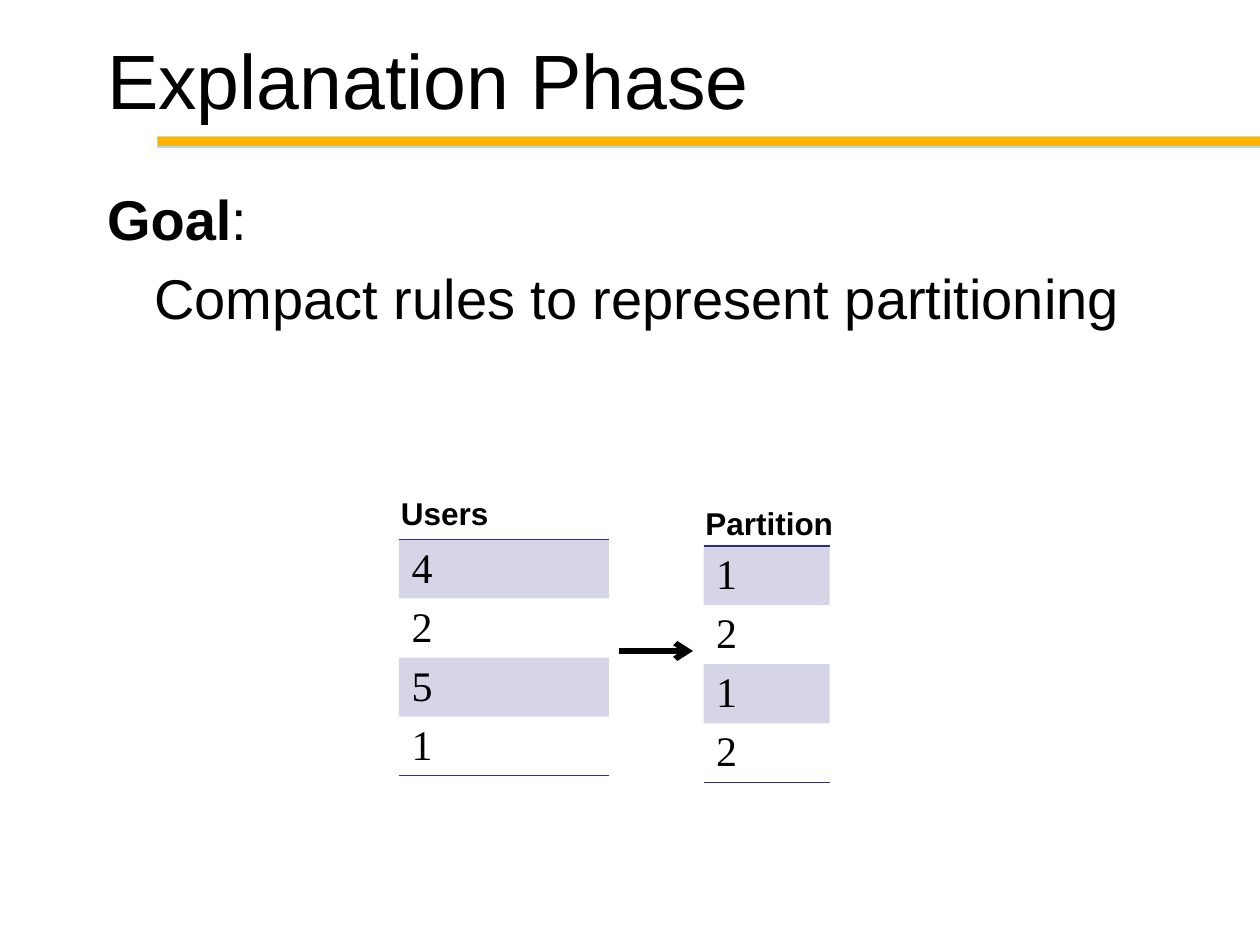
from lxml import etree
from pptx import Presentation
from pptx.dml.color import RGBColor
from pptx.enum.shapes import MSO_CONNECTOR, MSO_SHAPE
from pptx.enum.text import MSO_ANCHOR, MSO_AUTO_SIZE, PP_ALIGN
from pptx.oxml import parse_xml
from pptx.oxml.ns import nsdecls, qn
from pptx.util import Pt

STRAIGHT = MSO_CONNECTOR.STRAIGHT
RECT = MSO_SHAPE.RECTANGLE
MIDDLE, TOP = MSO_ANCHOR.MIDDLE, MSO_ANCHOR.TOP
NO_FIT, GROW = MSO_AUTO_SIZE.NONE, MSO_AUTO_SIZE.SHAPE_TO_FIT_TEXT
LEFT = PP_ALIGN.LEFT

COLORS = {"text": "000000", "bar": "FFB300", "bar_edge": "B6DCDF", "table": "2D2D8A"}
PLAIN_TABLE = "{2D5ABB26-0587-4C30-8999-92F81FD0307C}"
ROW_HEIGHT = 33.7


def rgb(name):
    return RGBColor.from_string(COLORS[name])


def place(sp, left, top, width, height):
    sp.left, sp.top, sp.width, sp.height = Pt(left), Pt(top), Pt(width), Pt(height)


def add_run(p, text, size, font="Arial", bold=False):
    r = p.add_run()
    r.text = text
    r.font.size, r.font.name, r.font.bold = Pt(size), font, bold
    r.font.color.rgb = rgb("text")


def set_title(s, text):
    sp = s.shapes.title
    place(sp, 54, 0, 612, 90)
    tf = sp.text_frame
    tf.vertical_anchor, tf.auto_size = MIDDLE, NO_FIT
    p = tf.paragraphs[0]
    p.alignment = LEFT
    add_run(p, text, 44)


def set_body(s, lines):
    """Each line is a left margin and its (text, bold) runs."""
    sp = s.placeholders[1]
    place(sp, 54, 102, 612, 378)
    tf = sp.text_frame
    tf.vertical_anchor, tf.auto_size = TOP, NO_FIT
    for i, (margin, runs) in enumerate(lines):
        p = tf.add_paragraph() if i else tf.paragraphs[0]
        pPr = p._p.get_or_add_pPr()
        pPr.set("marL", str(Pt(margin)))
        pPr.set("indent", "0")
        etree.SubElement(pPr, qn("a:buNone"))
        for text, bold in runs:
            add_run(p, text, 32, bold=bold)


def add_bar(s):
    sp = s.shapes.add_shape(RECT, Pt(90), Pt(78), Pt(633), Pt(6))
    sp.shadow.inherit = False
    sp.fill.solid()
    sp.fill.fore_color.rgb = rgb("bar")
    sp.line.color.rgb = rgb("bar_edge")
    sp.line.width = Pt(0.75)
    s.shapes.title._element.addprevious(sp._element)  # behind the text


def add_border(cell, side):
    cell._tc.get_or_add_tcPr().insert(0, parse_xml(
        f'<a:{side} {nsdecls("a")} w="{Pt(1)}"><a:solidFill>'
        f'<a:srgbClr val="{COLORS["table"]}"/></a:solidFill></a:{side}>'))


def add_column_table(s, values, left, top, width):
    frame = s.shapes.add_table(len(values), 1, Pt(left), Pt(top), Pt(width),
                               Pt(ROW_HEIGHT * len(values)))
    table = frame.table
    table.first_row = table.horz_banding = False
    table._tbl.tblPr.find(qn("a:tableStyleId")).text = PLAIN_TABLE
    for i, value in enumerate(values):
        cell = table.cell(i, 0)
        add_run(cell.text_frame.paragraphs[0], value, 24, "Times New Roman")
        if i % 2:
            cell.fill.background()
            continue
        cell.fill.solid()
        cell.fill.fore_color.rgb = rgb("table")
        color = cell._tc.tcPr.find(".//" + qn("a:srgbClr"))
        etree.SubElement(color, qn("a:alpha"), val="20000")
    add_border(table.cell(0, 0), "lnT")
    add_border(table.cell(len(values) - 1, 0), "lnB")


def add_arrow(s, x1, x2, y):
    line = s.shapes.add_connector(STRAIGHT, Pt(x1), Pt(y), Pt(x2), Pt(y))
    line.line.color.rgb = rgb("text")
    line.line.width = Pt(3.25)
    etree.SubElement(line.line._get_or_add_ln(), qn("a:tailEnd"), type="arrow")
    etree.SubElement(line._element.spPr, qn("a:effectLst"))


def add_label(s, text, left, top):
    tf = s.shapes.add_textbox(Pt(left), Pt(top), Pt(144), Pt(29)).text_frame
    tf.word_wrap, tf.auto_size = True, GROW
    add_run(tf.paragraphs[0], text, 18, bold=True)


def main():
    prs = Presentation()
    prs.slide_width, prs.slide_height = Pt(720), Pt(540)
    s = prs.slides.add_slide(prs.slide_layouts[1])

    # Heading and goal
    add_bar(s)
    set_title(s, "Explanation Phase")
    set_body(s, [(0, [("Goal", True), (":", False)]),
                 (27, [("Compact rules to represent partitioning", False)])])

    # Users mapped to partitions
    add_column_table(s, "4251", 228, 308.2, 120)
    add_column_table(s, "1212", 402, 312, 72)
    add_arrow(s, 354, 396, 372)
    add_label(s, "Users", 222, 278.5)
    add_label(s, "Partition", 396, 284.5)

    prs.save("out.pptx")


if __name__ == "__main__":
    main()
